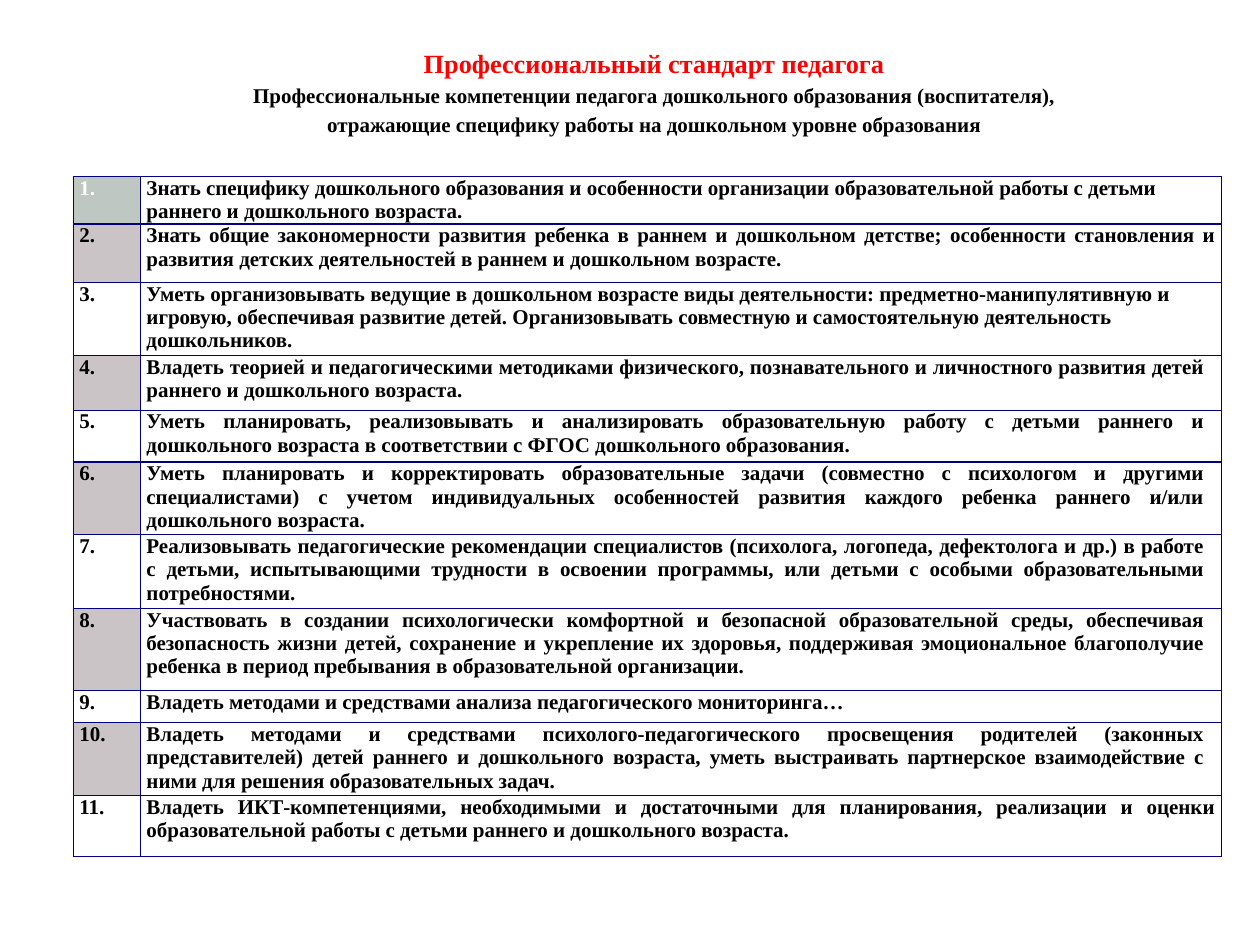
"""Build a slide listing the professional competencies of a preschool teacher."""
from dataclasses import dataclass

from lxml.etree import SubElement
from pptx import Presentation
from pptx.dml.color import RGBColor
from pptx.enum.text import MSO_ANCHOR, PP_ALIGN
from pptx.oxml.ns import qn
from pptx.util import Inches, Pt


@dataclass(frozen=True)
class Theme:
    font: str = "Times New Roman"
    heading_size: int = 20
    text_size: int = 16
    heading: str = "FF0000"
    text: str = "000000"
    paper: str = "FFFFFF"
    first_number: str = "BEC7C2"
    even_number: str = "CAC4C6"
    border: str = "00007E"


theme = Theme()
LEFT, JUSTIFY = PP_ALIGN.LEFT, PP_ALIGN.JUSTIFY

competencies = [
    (0.5, LEFT, 0, "Знать специфику дошкольного образования и особенности организации образовательной работы с детьми раннего и дошкольного возраста."),
    (0.62, JUSTIFY, 0, "Знать общие закономерности развития ребенка в раннем и дошкольном детстве; особенности становления и развития детских деятельностей в раннем и дошкольном возрасте."),
    (0.77, LEFT, 0, "Уметь организовывать ведущие в дошкольном возрасте виды деятельности: предметно-манипулятивную и игровую, обеспечивая развитие детей. Организовывать совместную и самостоятельную деятельность дошкольников."),
    (0.58, JUSTIFY, 0.12, "Владеть теорией и педагогическими методиками физического, познавательного и личностного развития детей раннего и дошкольного возраста."),
    (0.55, JUSTIFY, 0.12, "Уметь планировать, реализовывать и анализировать образовательную работу с детьми раннего и дошкольного возраста в соответствии с ФГОС дошкольного образования."),
    (0.77, JUSTIFY, 0.12, "Уметь планировать и корректировать образовательные задачи (совместно с психологом и другими специалистами) с учетом индивидуальных особенностей развития каждого ребенка раннего и/или дошкольного возраста."),
    (0.78, JUSTIFY, 0.12, "Реализовывать педагогические рекомендации специалистов (психолога, логопеда, дефектолога и др.) в работе с детьми, испытывающими трудности в освоении программы, или детьми с особыми образовательными потребностями."),
    (0.87, JUSTIFY, 0.12, "Участвовать в создании психологически комфортной и безопасной образовательной среды, обеспечивая безопасность жизни детей, сохранение и укрепление их здоровья, поддерживая эмоциональное благополучие ребенка в период пребывания в образовательной организации."),
    (0.34, JUSTIFY, 0.12, "Владеть методами и средствами анализа педагогического мониторинга…"),
    (0.77, JUSTIFY, 0.12, "Владеть методами и средствами психолого-педагогического просвещения родителей (законных представителей) детей раннего и дошкольного возраста, уметь выстраивать партнерское взаимодействие с ними для решения образовательных задач."),
    (0.65, JUSTIFY, 0, "Владеть ИКТ-компетенциями, необходимыми и достаточными для планирования, реализации и оценки образовательной работы с детьми раннего и дошкольного возраста."),
]


def write(paragraph, text, size, color, alignment):
    paragraph.text = text
    paragraph.alignment = alignment
    for run in paragraph.runs:
        run.font.name = theme.font
        run.font.size = Pt(size)
        run.font.bold = True
        run.font.color.rgb = RGBColor.from_string(color)


def style_cell(cell, fill):
    cell.margin_left = cell.margin_right = Inches(0.06)
    cell.margin_top = cell.margin_bottom = 0
    properties = cell._tc.get_or_add_tcPr()
    for side in ("a:lnL", "a:lnR", "a:lnT", "a:lnB"):
        line = SubElement(properties, qn(side), w=str(Pt(1)))
        SubElement(SubElement(line, qn("a:solidFill")), qn("a:srgbClr"), val=theme.border)
    cell.fill.solid()
    cell.fill.fore_color.rgb = RGBColor.from_string(fill)


presentation = Presentation()
presentation.slide_width = Inches(13.33)
presentation.slide_height = Inches(10)
slide = presentation.slides.add_slide(presentation.slide_layouts[5])

title = slide.shapes.title
title.left, title.top = Inches(2.03), Inches(0.4)
title.width, title.height = Inches(9.78), Inches(1.11)
heading = title.text_frame
heading.word_wrap = True
heading.vertical_anchor = MSO_ANCHOR.TOP
write(heading.paragraphs[0], "Профессиональный стандарт педагога",
      theme.heading_size, theme.heading, PP_ALIGN.CENTER)
write(heading.add_paragraph(),
      "Профессиональные компетенции педагога дошкольного образования (воспитателя), "
      "отражающие специфику работы на дошкольном уровне образования",
      theme.text_size, theme.text, PP_ALIGN.CENTER)
for paragraph in heading.paragraphs:
    paragraph.line_spacing = 1.15

total_height = sum(height for height, *_ in competencies)
table = slide.shapes.add_table(len(competencies), 2, Inches(0.78), Inches(1.87),
                               Inches(12.14), Inches(total_height)).table
table.first_row = table.horz_banding = False
table.columns[0].width = Inches(0.71)
table.columns[1].width = Inches(11.43)

for number, (height, alignment, right_indent, competency) in enumerate(competencies, 1):
    row = table.rows[number - 1]
    row.height = Inches(height)
    number_cell, competency_cell = row.cells
    if number == 1:
        number_fill, number_color = theme.first_number, theme.paper
    else:
        number_fill = theme.paper if number % 2 else theme.even_number
        number_color = theme.text
    style_cell(number_cell, number_fill)
    style_cell(competency_cell, theme.paper)
    write(number_cell.text_frame.paragraphs[0], f"{number}.",
          theme.text_size, number_color, JUSTIFY)
    statement = competency_cell.text_frame.paragraphs[0]
    write(statement, competency, theme.text_size, theme.text, alignment)
    if right_indent:
        statement._p.get_or_add_pPr().set("marR", str(Inches(right_indent)))

presentation.save("out.pptx")
